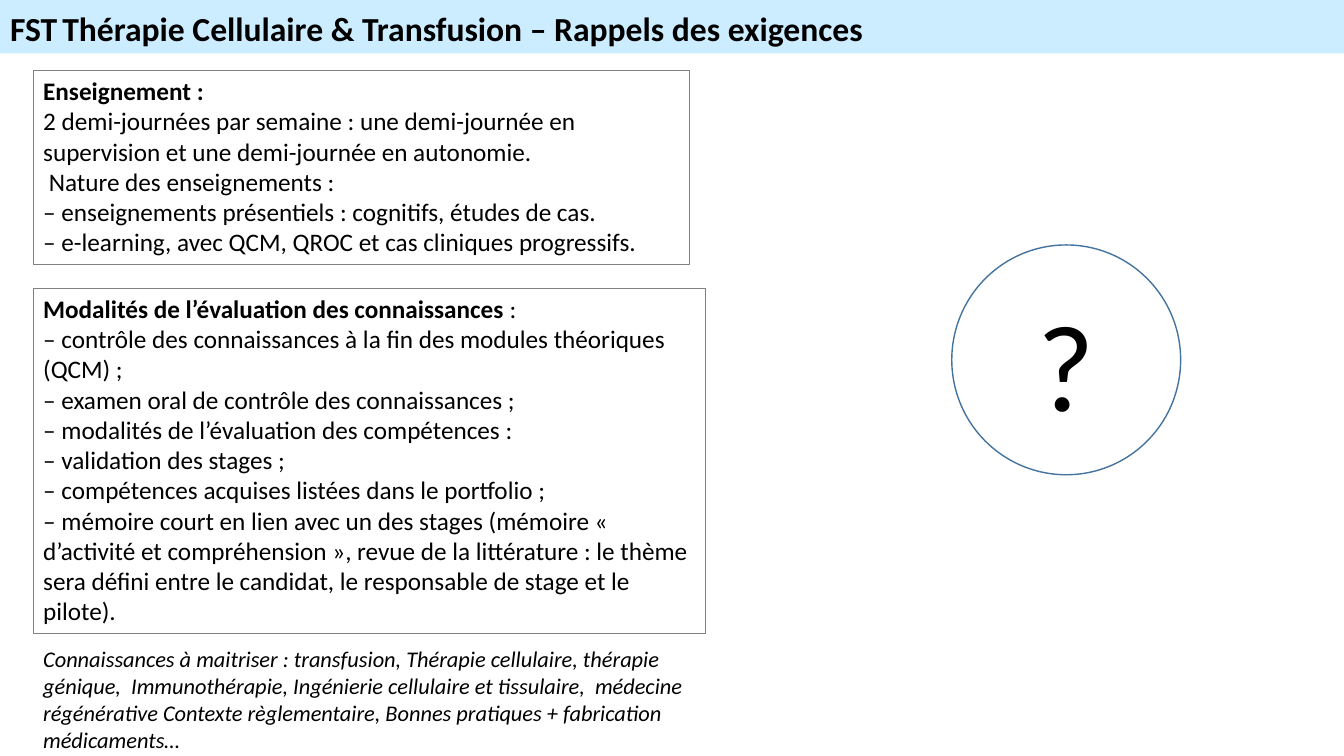
"""Build the slide recalling the requirements of the FST in cell therapy and transfusion."""
from pptx import Presentation
from pptx.dml.color import RGBColor
from pptx.enum.shapes import MSO_SHAPE
from pptx.enum.text import MSO_ANCHOR, MSO_AUTO_SIZE, PP_ALIGN
from pptx.util import Inches, Pt

OVAL = MSO_SHAPE.OVAL
TOP = MSO_ANCHOR.TOP
NO_FIT = MSO_AUTO_SIZE.NONE
LEFT, CENTER = PP_ALIGN.LEFT, PP_ALIGN.CENTER

BLACK = RGBColor(0, 0, 0)
GREY = RGBColor(0x80, 0x80, 0x80)
BLUE = RGBColor(0x43, 0x73, 0x9E)
PALE_BLUE = RGBColor(0xCC, 0xEC, 0xFF)
FONT = "Calibri"
MARGIN = 0.33

TITLE = [
    ("FST", 24, True),
    (" ", 16, False),
    ("Thérapie Cellulaire & Transfusion – Rappels des exigences", 24, True),
]
TEACHING = [
    "2 demi-journées par semaine : une demi-journée en supervision et une "
    "demi-journée en autonomie.",
    " Nature des enseignements :",
    "– enseignements présentiels : cognitifs, études de cas.",
    "– e-learning, avec QCM, QROC et cas cliniques progressifs.",
]
ASSESSMENT = [
    "– contrôle des connaissances à la fin des modules théoriques (QCM) ;",
    "– examen oral de contrôle des connaissances ;",
    "– modalités de l’évaluation des compétences :",
    "– validation des stages ;",
    "– compétences acquises listées dans le portfolio ;",
    "– mémoire court en lien avec un des stages (mémoire « d’activité et "
    "compréhension », revue de la littérature : le thème sera défini entre le "
    "candidat, le responsable de stage et le pilote).",
]
KNOWLEDGE = (
    "Connaissances à maitriser : transfusion, Thérapie cellulaire, thérapie "
    "génique,  Immunothérapie, Ingénierie cellulaire et tissulaire,  médecine "
    "régénérative Contexte règlementaire, Bonnes pratiques + fabrication "
    "médicaments…"
)


def add_run(p, text, size, bold=False, italic=False):
    r = p.add_run()
    r.text = text
    r.font.name = FONT
    r.font.size = Pt(size)
    r.font.bold = bold
    r.font.italic = italic
    r.font.color.rgb = BLACK


def set_title(s, prs):
    title = s.shapes.title
    title.left = title.top = 0
    title.width, title.height = prs.slide_width, Inches(0.53)
    title.fill.solid()
    title.fill.fore_color.rgb = PALE_BLUE
    tf = title.text_frame
    tf.auto_size = NO_FIT
    tf.vertical_anchor = TOP
    p = tf.paragraphs[0]
    p.alignment = LEFT
    p.line_spacing = 1.07
    for text, size, bold in TITLE:
        add_run(p, text, size, bold)


def add_text(s, left, top, width, height, wrap=True):
    box = s.shapes.add_textbox(Inches(left), Inches(top), Inches(width), Inches(height))
    box.text_frame.word_wrap = wrap
    return box


def add_framed_list(s, top, width, height, heading, lines):
    box = add_text(s, MARGIN, top, width, height)
    box.line.color.rgb = GREY
    box.line.width = Pt(0.75)
    tf = box.text_frame
    for text, bold in heading:
        add_run(tf.paragraphs[0], text, 18, bold)
    for line in lines:
        add_run(tf.add_paragraph(), line, 18)


def add_question_mark(s):
    box = add_text(s, 10.19, 2.81, 0.77, 1.58, wrap=False)
    p = box.text_frame.paragraphs[0]
    p.alignment = CENTER
    add_run(p, "?", 88)
    circle = s.shapes.add_shape(OVAL, Inches(9.44), Inches(2.43), Inches(2.27), Inches(2.28))
    circle.shadow.inherit = False
    circle.fill.background()
    circle.line.color.rgb = BLUE
    circle.line.width = Pt(1)


def main():
    prs = Presentation()
    prs.slide_width, prs.slide_height = Inches(13.33), Inches(7.5)
    s = prs.slides.add_slide(prs.slide_layouts[5])
    set_title(s, prs)
    add_framed_list(s, 0.7, 6.51, 1.92, [("Enseignement :", True)], TEACHING)
    heading = [("Modalités de l’évaluation des connaissances ", True), (":", False)]
    add_framed_list(s, 2.86, 6.67, 3.43, heading, ASSESSMENT)
    knowledge = add_text(s, MARGIN, 6.35, 6.67, 1.18)
    add_run(knowledge.text_frame.paragraphs[0], KNOWLEDGE, 16, italic=True)
    add_question_mark(s)
    prs.save("out.pptx")


if __name__ == "__main__":
    main()
